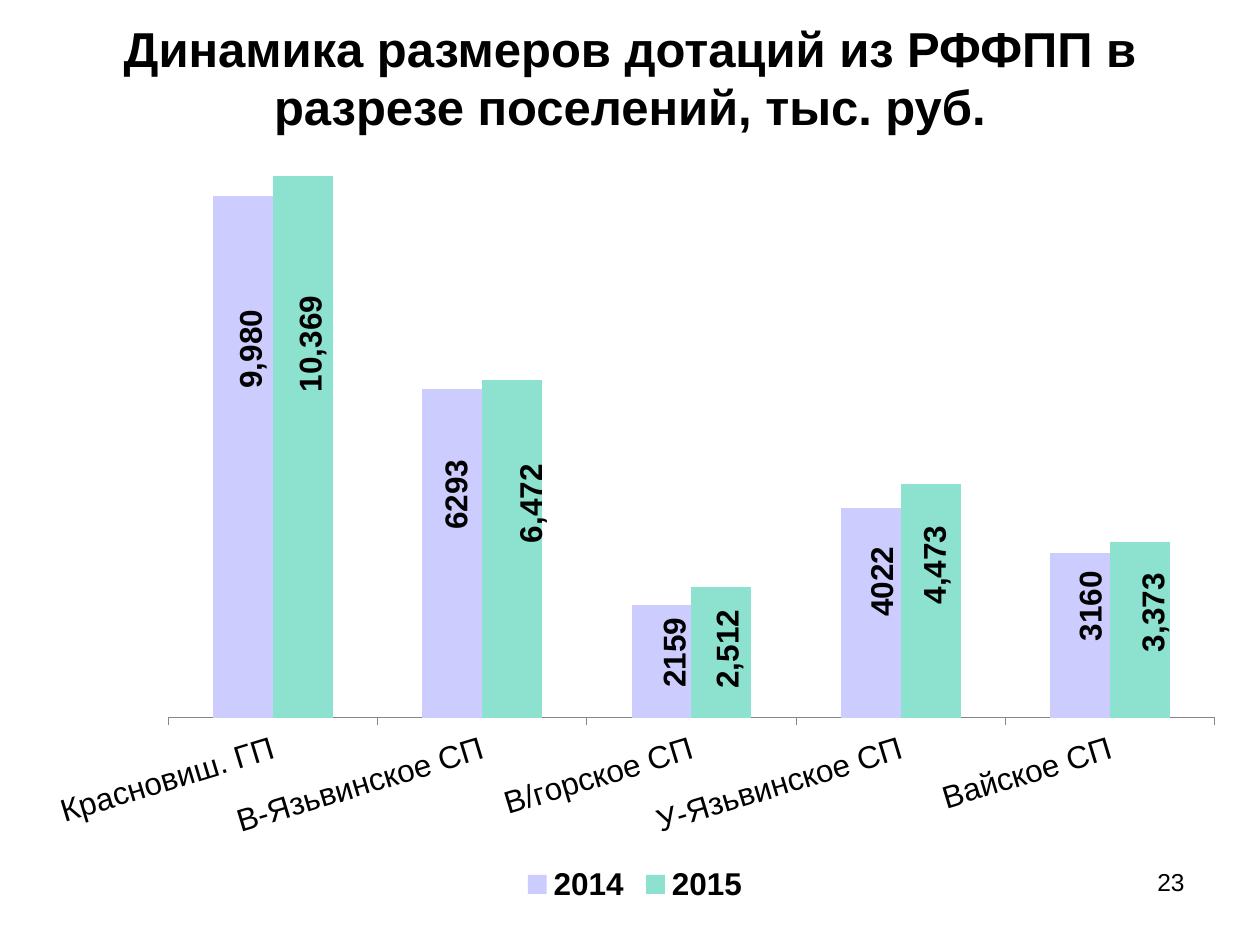
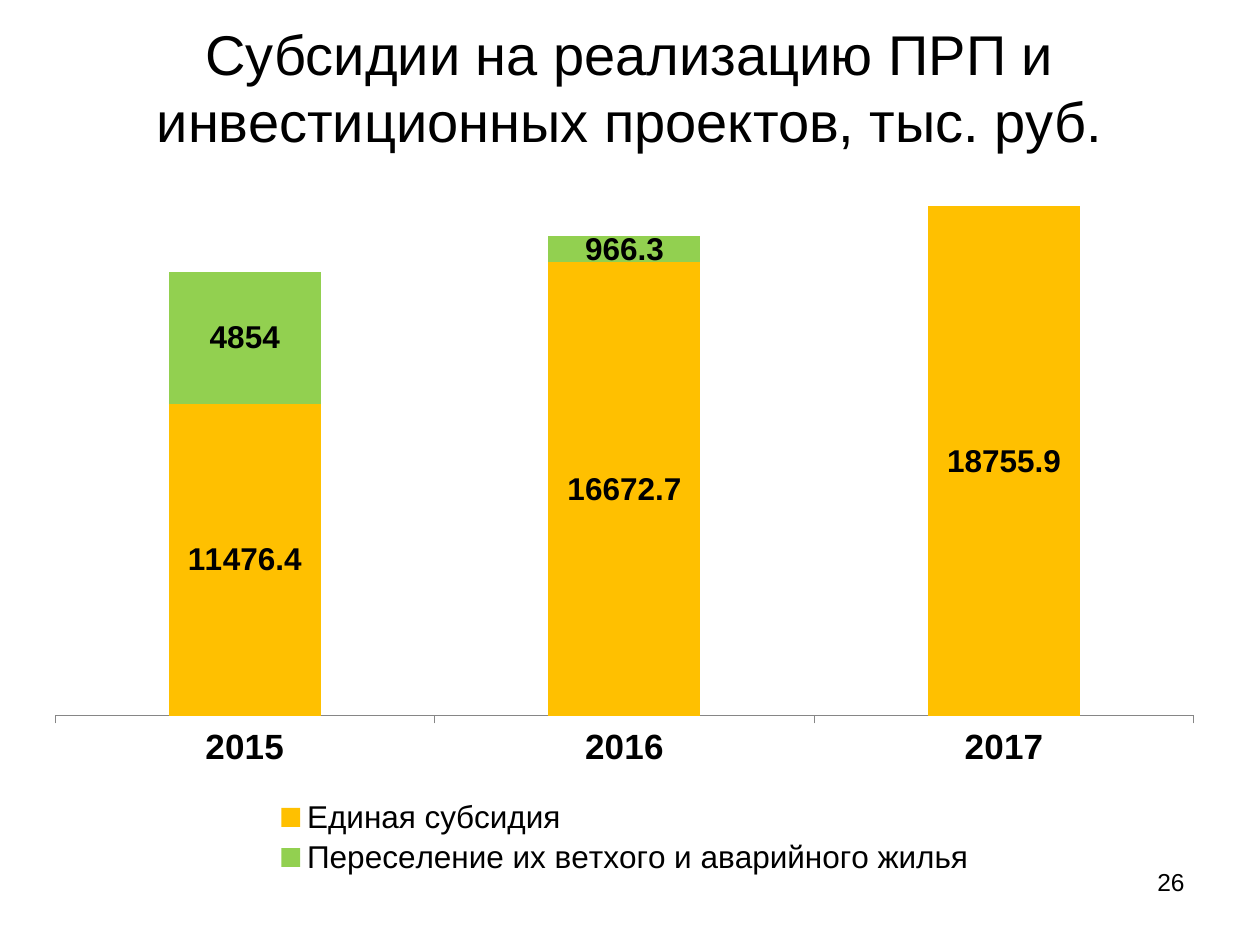
from collections import namedtuple
from dataclasses import dataclass

from lxml import etree
from pptx import Presentation
from pptx.chart.data import CategoryChartData
from pptx.dml.color import RGBColor
from pptx.enum.chart import XL_CHART_TYPE, XL_LABEL_POSITION, XL_LEGEND_POSITION, XL_TICK_MARK
from pptx.enum.text import MSO_ANCHOR, PP_ALIGN
from pptx.util import Pt

CLUSTERED, STACKED = XL_CHART_TYPE.COLUMN_CLUSTERED, XL_CHART_TYPE.COLUMN_STACKED
LABEL_CENTER = XL_LABEL_POSITION.CENTER
LEGEND_BOTTOM = XL_LEGEND_POSITION.BOTTOM
TICK_OUT = XL_TICK_MARK.OUTSIDE
MIDDLE, TOP = MSO_ANCHOR.MIDDLE, MSO_ANCHOR.TOP
CENTER, RIGHT = PP_ALIGN.CENTER, PP_ALIGN.RIGHT

CHART_TAG = "{http://schemas.openxmlformats.org/drawingml/2006/chart}"
EMU_PER_PX = 914400 / 126
THOUSANDS, PLAIN = "#,##0", "General"
BLANK_LAYOUT = 6

Box = namedtuple("Box", "left top width height")
Series = namedtuple("Series", "name color values")

PAGE = Box(0, 0, 1260, 945)
TITLE_LEFT, TITLE_TOP, TITLE_WIDTH = 63, 38, 1134
NUMBER_BOX = Box(903, 861, 294, 66)


@dataclass(frozen=True)
class Theme:
    font: str = "Arial"
    text: str = "000000"
    axis: str = "868686"
    lavender: str = "CCCCFF"
    mint: str = "8CE1CF"
    amber: str = "FFC000"
    green: str = "92D050"
    chart_size: int = 18
    year_size: int = 20
    number_size: int = 14


THEME = Theme()


def emu(px):
    return round(px * EMU_PER_PX)


def style_font(font, size, bold=False):
    font.name = THEME.font
    font.size = Pt(size)
    font.bold = bold
    font.color.rgb = RGBColor.from_string(THEME.text)


def add_text(page, box, text, size, align, anchor, bold=False):
    frame = page.shapes.add_textbox(*map(emu, box)).text_frame
    frame.word_wrap = True
    frame.vertical_anchor = anchor
    para = frame.paragraphs[0]
    para.text = text
    para.alignment = align
    style_font(para.font, size, bold)


def add_page(deck, title, title_height, title_size, number, bold=False):
    """Add a blank page with the shared title and page number."""
    page = deck.slides.add_slide(deck.slide_layouts[BLANK_LAYOUT])
    title_box = Box(TITLE_LEFT, TITLE_TOP, TITLE_WIDTH, title_height)
    add_text(page, title_box, title, title_size, CENTER, MIDDLE, bold)
    add_text(page, NUMBER_BOX, number, THEME.number_size, RIGHT, TOP)
    return page


def make_layout(**settings):
    layout = etree.Element(CHART_TAG + "layout")
    manual = etree.SubElement(layout, CHART_TAG + "manualLayout")
    for name, value in settings.items():
        etree.SubElement(manual, CHART_TAG + name, val=str(value))
    return layout


def edge_layout(chart_box, part, **target):
    """Lay out a part, given in px inside the chart, as fractions of the chart."""
    return make_layout(**target, xMode="edge", yMode="edge",
                       x=part.left / chart_box.width, y=part.top / chart_box.height,
                       w=part.width / chart_box.width, h=part.height / chart_box.height)


def rotate_text(element, degrees):
    body = element.find(CHART_TAG + "txPr").bodyPr
    body.set("rot", str(degrees * 60000))
    body.set("vert", "horz")


def add_column_chart(page, box, kind, categories, series_list, maximum):
    data = CategoryChartData()
    data.categories = categories
    for series in series_list:
        data.add_series(series.name, series.values)
    chart = page.shapes.add_chart(kind, *map(emu, box), data).chart
    chart.has_title = False
    style_font(chart.font, THEME.chart_size)

    plot = chart.plots[0]
    plot.gap_width = 150
    plot.overlap = 100 if kind == STACKED else 0
    plot.vary_by_categories = False
    for columns, series in zip(plot.series, series_list):
        columns.format.fill.solid()
        columns.format.fill.fore_color.rgb = RGBColor.from_string(series.color)
        style_labels(columns.data_labels)

    values_axis = chart.value_axis
    values_axis.visible = False
    values_axis.has_major_gridlines = False
    values_axis.minimum_scale, values_axis.maximum_scale = 0, maximum
    return chart


def style_labels(labels):
    """Show bold values in the middle of the bars, without leader lines."""
    labels.show_value = True
    labels.position = LABEL_CENTER
    style_font(labels.font, THEME.chart_size, bold=True)
    for leader in labels._element.findall(CHART_TAG + "showLeaderLines"):
        leader.set("val", "0")


def style_category_axis(chart, size, bold=False):
    axis = chart.category_axis
    axis.major_tick_mark = TICK_OUT
    axis.format.line.color.rgb = RGBColor.from_string(THEME.axis)
    axis.format.line.width = Pt(0.5)
    style_font(axis.tick_labels.font, size, bold)


def place_plot(chart, chart_box, plot_box):
    area = chart.element.find(f".//{CHART_TAG}plotArea")
    for automatic in area.findall(CHART_TAG + "layout"):
        area.remove(automatic)
    area.insert(0, edge_layout(chart_box, plot_box, layoutTarget="inner"))


def add_legend(chart, chart_box, legend_box, bold=False):
    chart.has_legend = True
    legend = chart.legend
    legend.position = LEGEND_BOTTOM
    legend.include_in_layout = False
    style_font(legend.font, THEME.chart_size, bold)
    element = chart.element.find(f".//{CHART_TAG}legend")
    for automatic in element.findall(CHART_TAG + "layout"):
        element.remove(automatic)
    position = element.find(CHART_TAG + "legendPos")
    position.addnext(edge_layout(chart_box, legend_box))


def stand_labels_upright(columns, chart_box, shifts, formats):
    """Turn each bar's label and move it by its px shift from the bar's middle."""
    for index in range(len(shifts)):
        label = columns.points[index].data_label
        style_font(label.font, THEME.chart_size, bold=True)
        label.position = LABEL_CENTER
    elements = columns.data_labels._element.findall(CHART_TAG + "dLbl")
    for element, (right, down), code in zip(elements, shifts, formats):
        rotate_text(element, -90)
        layout = make_layout(x=right / chart_box.width, y=down / chart_box.height)
        element.find(CHART_TAG + "idx").addnext(layout)
        layout.addnext(etree.Element(CHART_TAG + "numFmt", formatCode=code, sourceLinked="0"))


def build_grants(deck):
    page = add_page(deck, "Динамика размеров дотаций из РФФПП в разрезе поселений, тыс. руб.",
                    title_height=78, title_size=28, number="23", bold=True)
    box = Box(32, 73, 1207, 840)
    settlements = ["Красновиш. ГП", "В-Язьвинское СП", "В/горское СП",
                   "У-Язьвинское СП", "Вайское СП"]
    years = [Series("2014", THEME.lavender, (9980, 6293, 2159, 4022, 3160)),
             Series("2015", THEME.mint, (10369, 6472, 2512, 4473, 3373))]
    label_shifts = [[(8, -108), (4, -59), (13, -9), (11, -31), (10, -29)],
                    [(8, -103), (19, -45), (6, -3), (4, -36), (13, -17)]]
    label_formats = [[THOUSANDS] + [PLAIN] * 4, [THOUSANDS] * 5]

    chart = add_column_chart(page, box, CLUSTERED, settlements, years, maximum=12000)
    style_category_axis(chart, THEME.chart_size)
    rotate_text(chart.category_axis._element, -17)
    place_plot(chart, box, Box(136, 18, 1047, 627))
    add_legend(chart, box, Box(484, 798, 238, 44), bold=True)
    for columns, shifts, formats in zip(chart.plots[0].series, label_shifts, label_formats):
        stand_labels_upright(columns, box, shifts, formats)


def build_subsidies(deck):
    page = add_page(deck, "Субсидии на реализацию ПРП и инвестиционных проектов, тыс. руб.",
                    title_height=98, title_size=32, number="26")
    box = Box(32, 158, 1187, 724)
    subsidies = [Series("Единая субсидия", THEME.amber, (11476.4, 16672.7, 18755.9)),
                 Series("Переселение их ветхого и аварийного жилья", THEME.green,
                        (4854, 966.3, None))]

    chart = add_column_chart(page, box, STACKED, ["2015", "2016", "2017"], subsidies,
                             maximum=20000)
    style_category_axis(chart, THEME.year_size, bold=True)
    place_plot(chart, box, Box(23, 14, 1139, 544))
    add_legend(chart, box, Box(240, 637, 706, 85))


def main():
    deck = Presentation()
    deck.slide_width, deck.slide_height = emu(PAGE.width), emu(PAGE.height)
    build_grants(deck)
    build_subsidies(deck)
    deck.save("out.pptx")


if __name__ == "__main__":
    main()
